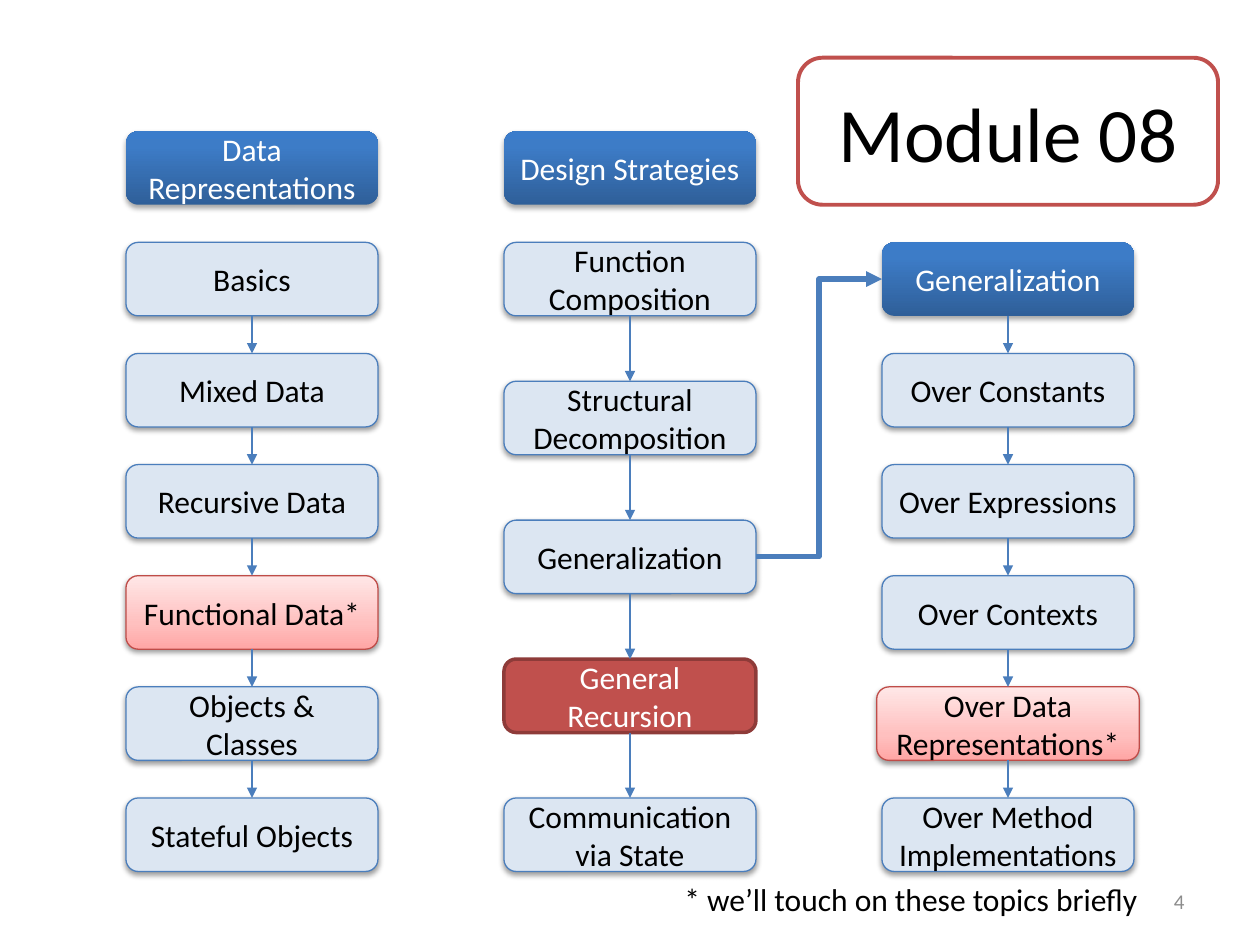
from copy import deepcopy

from lxml.etree import SubElement
from pptx import Presentation
from pptx.dml.color import RGBColor
from pptx.enum.shapes import MSO_CONNECTOR, MSO_SHAPE
from pptx.enum.text import MSO_ANCHOR, PP_ALIGN
from pptx.oxml.ns import qn
from pptx.util import Pt

BLACK = RGBColor(0x00, 0x00, 0x00)
WHITE = RGBColor(0xFF, 0xFF, 0xFF)
GRAY = RGBColor(0x8C, 0x8C, 0x8C)
BLUE = RGBColor(0x4B, 0x7E, 0xBC)
PALE_BLUE = RGBColor(0xDC, 0xE6, 0xF2)
RED = RGBColor(0xC0, 0x50, 0x4D)
DARK_RED = RGBColor(0x8E, 0x3B, 0x39)
BRIEF_RED = RGBColor(0xBF, 0x4C, 0x48)
HEADER_STOPS = [
    (0, RGBColor(0x2F, 0x5F, 0x99)),
    (0.8, RGBColor(0x3D, 0x7C, 0xC7)),
    (1, RGBColor(0x3A, 0x7C, 0xCB)),
]
BRIEF_STOPS = [
    (0, RGBColor(0xFF, 0xA6, 0xA5)),
    (0.35, RGBColor(0xFF, 0xC0, 0xBF)),
    (1, RGBColor(0xFF, 0xE7, 0xE7)),
]

STYLES = {
    "header": {"fill": HEADER_STOPS, "line": None, "color": WHITE, "shadow": (35, 1.8)},
    "topic": {"fill": PALE_BLUE, "line": (BLUE, 0.75), "color": BLACK, "shadow": (38, 1.6)},
    "brief": {"fill": BRIEF_STOPS, "line": (BRIEF_RED, 0.75), "color": BLACK, "shadow": (38, 1.6)},
    "current": {"fill": RED, "line": (DARK_RED, 2), "color": WHITE, "shadow": None},
    "title": {"fill": None, "line": (RED, 2.25), "color": BLACK, "shadow": None},
}

HEADERS = [(72, "Data Representations"), (288, "Design Strategies")]
COLUMNS = {
    "data": (72, [
        ("Basics", "topic"),
        ("Mixed Data", "topic"),
        ("Recursive Data", "topic"),
        ("Functional Data*", "brief"),
        ("Objects & Classes", "topic"),
        ("Stateful Objects", "topic"),
    ]),
    "design": (288, [
        ("Function Composition", "topic"),
        ("Structural Decomposition", "topic"),
        ("Generalization", "topic"),
        ("General Recursion", "current"),
        ("Communication via State", "topic"),
    ]),
    "generalization": (504, [
        ("Generalization", "header"),
        ("Over Constants", "topic"),
        ("Over Expressions", "topic"),
        ("Over Contexts", "topic"),
        ("Over Data Representations*", "brief"),
        ("Over Method Implementations", "topic"),
    ]),
}
WIDER = {"Over Data Representations*": 3}

BOX_WIDTH, BOX_HEIGHT = 144, 42
HEADER_TOP, FIRST_TOP, LAST_TOP = 75, 138.5, 456


def write_text(shape, text, size, color, alignment, anchor, wrap=True):
    frame = shape.text_frame
    frame.word_wrap = wrap
    frame.vertical_anchor = anchor
    paragraph = frame.paragraphs[0]
    paragraph.alignment = alignment
    run = paragraph.add_run()
    run.text = text
    for name, value in {"name": "Calibri", "size": Pt(size)}.items():
        setattr(run.font, name, value)
    run.font.color.rgb = color


def paint_gradient(fill, stops):
    fill.gradient()
    fill.gradient_angle = 90
    stop_list = fill.gradient_stops[0]._gs.getparent()
    stop_list.append(deepcopy(stop_list[-1]))
    for stop, (position, color) in zip(fill.gradient_stops, stops):
        stop.position = position
        stop.color.rgb = color


def add_shadow(shape, opacity, distance):
    effects = shape.element.spPr.find(qn("a:effectLst"))
    shadow = SubElement(effects, qn("a:outerShdw"), {
        "blurRad": str(Pt(3.1)), "dist": str(Pt(distance)),
        "dir": "5400000", "rotWithShape": "0",
    })
    color = SubElement(shadow, qn("a:srgbClr"), val="000000")
    SubElement(color, qn("a:alpha"), val=str(opacity * 1000))


def add_box(slide, left, top, width, height, text, style_name, size=18):
    style = STYLES[style_name]
    shape = slide.shapes.add_shape(
        MSO_SHAPE.ROUNDED_RECTANGLE, Pt(left), Pt(top), Pt(width), Pt(height))
    shape.shadow.inherit = False
    if style["fill"] is None:
        shape.fill.background()
    elif isinstance(style["fill"], list):
        paint_gradient(shape.fill, style["fill"])
    else:
        shape.fill.solid()
        shape.fill.fore_color.rgb = style["fill"]
    if style["line"]:
        color, width = style["line"]
        shape.line.color.rgb = color
        shape.line.width = Pt(width)
    else:
        shape.line.fill.background()
    if style["shadow"]:
        add_shadow(shape, *style["shadow"])
    write_text(shape, text, size, style["color"], PP_ALIGN.CENTER, MSO_ANCHOR.MIDDLE)
    return shape


def add_arrow(slide, kind, start, start_side, end, end_side, width):
    connector = slide.shapes.add_connector(kind, 0, 0, 0, 0)
    connector.begin_connect(start, start_side)
    connector.end_connect(end, end_side)
    connector.line.color.rgb = BLUE
    connector.line.width = Pt(width)
    properties = connector.element.spPr
    SubElement(properties.find(qn("a:ln")), qn("a:tailEnd"), type="triangle")
    SubElement(properties, qn("a:effectLst"))


def add_column(slide, left, topics):
    pitch = (LAST_TOP - FIRST_TOP) / (len(topics) - 1)
    boxes = []
    for row, (text, style_name) in enumerate(topics):
        extra = WIDER.get(text, 0)
        boxes.append(add_box(
            slide, left - extra, FIRST_TOP + row * pitch,
            BOX_WIDTH + 2 * extra, BOX_HEIGHT, text, style_name))
    for upper, lower in zip(boxes, boxes[1:]):
        add_arrow(slide, MSO_CONNECTOR.STRAIGHT, upper, 2, lower, 0, 0.75)
    return boxes


def main():
    presentation = Presentation()
    presentation.slide_width, presentation.slide_height = Pt(720), Pt(540)
    slide = presentation.slides.add_slide(presentation.slide_layouts[6])

    for left, text in HEADERS:
        add_box(slide, left, HEADER_TOP, BOX_WIDTH, BOX_HEIGHT, text, "header")
    columns = {name: add_column(slide, left, topics)
               for name, (left, topics) in COLUMNS.items()}
    add_arrow(slide, MSO_CONNECTOR.ELBOW, columns["design"][2], 3,
              columns["generalization"][0], 1, 3)
    add_box(slide, 456, 33, 240, 84, "Module 08", "title", 44)

    number = slide.shapes.add_textbox(Pt(516), Pt(500.5), Pt(168), Pt(28.75))
    write_text(number, "4", 12, GRAY, PP_ALIGN.RIGHT, MSO_ANCHOR.MIDDLE)
    footnote = slide.shapes.add_textbox(Pt(384), Pt(499.5), Pt(276.5), Pt(29))
    write_text(footnote, "* we’ll touch on these topics briefly", 18, BLACK,
               PP_ALIGN.LEFT, MSO_ANCHOR.TOP, wrap=False)

    presentation.save("out.pptx")


if __name__ == "__main__":
    main()
